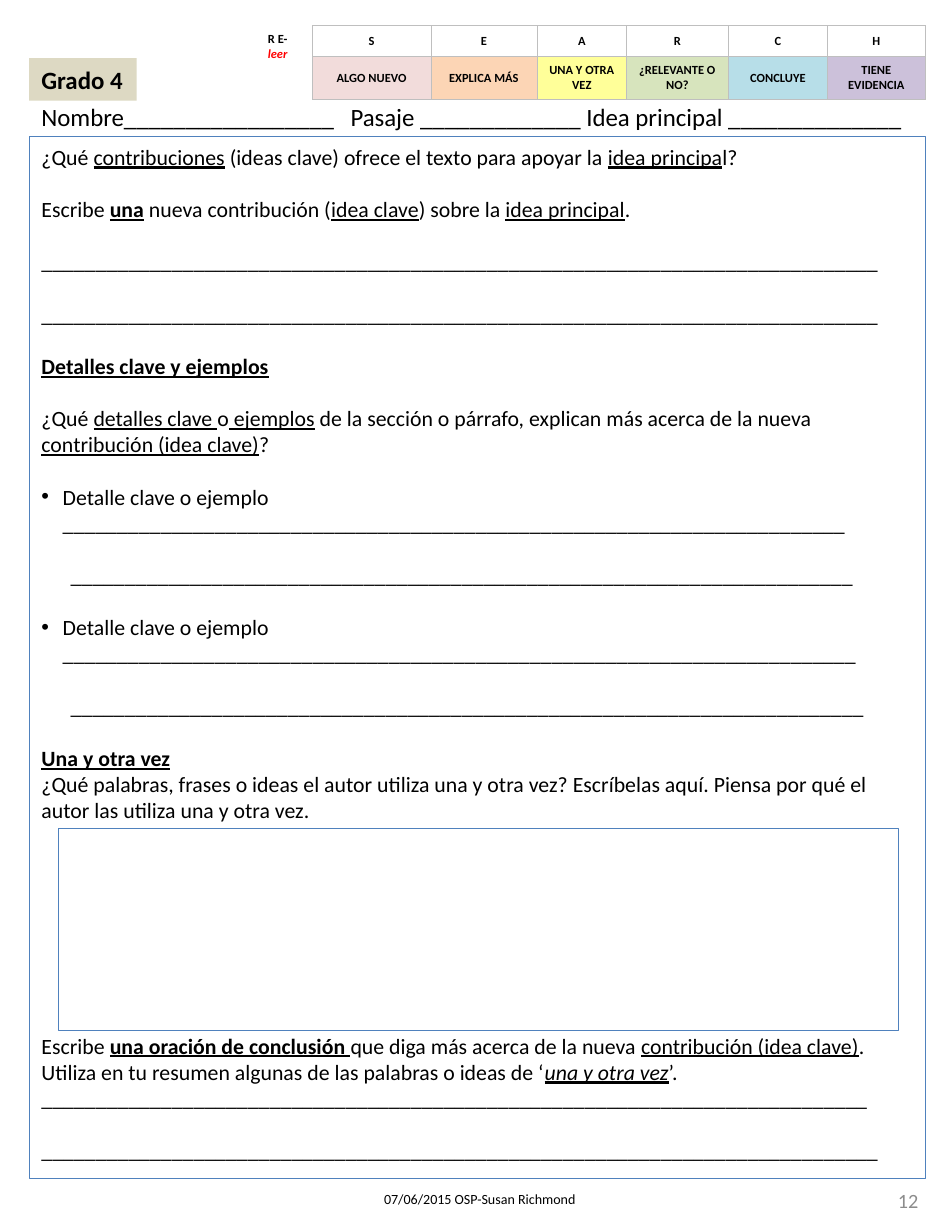
from lxml import etree
from pptx import Presentation
from pptx import util as u
from pptx.dml.color import RGBColor
from pptx.enum import shapes, text
from pptx.oxml import ns

FONT = "Calibri"
COLORS = {
    "ink": "000000", "paper": "FFFFFF", "frame": "4F81BD", "grid": "BFBFBF",
    "muted": "8C8C8C", "accent": "FF0000", "grade": "DDD9C3",
    "S": "F2DCDB", "E": "FCD5B5", "A": "FFFF99", "R": "D7E4BD", "C": "B7DEE8", "H": "CCC1DA",
}
SEARCH = [
    ("S", "ALGO NUEVO", 106), ("E", "EXPLICA MÁS", 95), ("A", "UNA Y OTRA VEZ", 80),
    ("R", "¿RELEVANTE O NO?", 91), ("C", "CONCLUYE", 89), ("H", "TIENE EVIDENCIA", 87),
]
LINE = 16.8
RULE = "_" * 77


def worksheet_lines():
    """Return (kind, blank lines before, styled runs) for each paragraph."""
    lines = [
        ("plain", 0, [("¿Qué ", ""), ("contribuciones", "u"),
                      (" (ideas clave) ofrece el texto para apoyar la ", ""),
                      ("idea principa", "u"), ("l?", "")]),
        ("plain", 1, [("Escribe ", ""), ("una", "bu"), (" nueva contribución (", ""),
                      ("idea clave", "u"), (") sobre la ", ""), ("idea principal", "u"), (".", "")]),
        ("plain", 1, [(RULE, "")]),
        ("plain", 1, [(RULE, "")]),
        ("plain", 1, [("Detalles clave y ejemplos", "bu")]),
        ("plain", 1, [("¿Qué ", ""), ("detalles clave ", "u"), ("o", ""), (" ejemplos", "u"),
                      (" de la sección o párrafo, explican más acerca de la nueva ", ""),
                      ("contribución (idea clave)", "u"), ("?", "")]),
    ]
    for length in (72, 73):
        lines += [("bullet", 1, [("Detalle clave o ejemplo " + "_" * length, "")]),
                  ("inset", 1, [("_" * length, "")])]
    return lines + [
        ("plain", 1, [("Una y otra vez", "bu")]),
        ("plain", 0, [("¿Qué palabras, frases o ideas el autor utiliza una y otra vez? "
                       "Escríbelas aquí. Piensa por qué el autor las utiliza una y otra vez.", "")]),
        ("plain", 8, [("Escribe ", ""), ("una oración de conclusión ", "bu"),
                      ("que diga más acerca de la nueva ", ""), ("contribución (idea clave)", "u"),
                      (". Utiliza en tu resumen algunas de las palabras o ideas de ‘", ""),
                      ("una y otra vez", "iu"), ("’.", "")]),
        ("plain", 0, [(RULE[:-1], "")]),
        ("plain", 1, [(RULE, "")]),
    ]


def part(box, left, top, width, height):
    """Return the part of a box given by percentages of its size."""
    x, y, w, h = box
    return (int(x + w * left / 100), int(y + h * top / 100),
            int(w * width / 100), int(h * height / 100))


def rgb(name):
    """Look up a named colour."""
    return RGBColor.from_string(COLORS[name])


def write(paragraph, runs, size, color="ink", align=text.PP_ALIGN.LEFT):
    """Write styled runs, with b, i and u for bold, italic and underline."""
    paragraph.alignment = align
    for words, style in runs:
        run = paragraph.add_run()
        run.text = words
        font = run.font
        font.name, font.size = FONT, u.Pt(size)
        font.color.rgb = rgb(color)
        font.bold, font.italic, font.underline = (mark in style for mark in "biu")


def set_insets(frame, side=0.11, end=0.06):
    """Wrap a text frame and set its insets in inches."""
    frame.word_wrap = True
    frame.margin_left = frame.margin_right = u.Inches(side)
    frame.margin_top = frame.margin_bottom = u.Inches(end)


def indent(paragraph, left, first=0, bullet=False):
    """Indent a paragraph, with a hanging bullet if asked."""
    props = paragraph._p.get_or_add_pPr()
    props.set("marL", str(u.Inches(left)))
    props.set("indent", str(u.Inches(first)))
    if bullet:
        etree.SubElement(props, ns.qn("a:buFont"), typeface="Arial")
        etree.SubElement(props, ns.qn("a:buChar"), char="•")


def add_label(slide, box, words, size, style="", color="ink", align=text.PP_ALIGN.LEFT):
    """Add a one-paragraph text box."""
    label = slide.shapes.add_textbox(*box)
    set_insets(label.text_frame)
    write(label.text_frame.paragraphs[0], [(words, style)], size, color, align)
    return label


def add_frame(slide, box):
    """Add an unfilled rectangle with a thin outline."""
    frame = slide.shapes.add_shape(shapes.MSO_SHAPE.RECTANGLE, *box)
    frame.shadow.inherit = False
    frame.fill.background()
    frame.line.color.rgb = rgb("frame")
    frame.line.width = u.Pt(0.75)
    return frame


def add_worksheet(slide, box):
    """Add the framed questions and the answer box inside them."""
    sheet = add_frame(slide, box)
    sheet.fill.solid()
    sheet.fill.fore_color.rgb = rgb("paper")
    questions = sheet.text_frame
    set_insets(questions)
    questions.vertical_anchor = text.MSO_ANCHOR.TOP
    for index, (kind, gap, runs) in enumerate(worksheet_lines()):
        question = questions.add_paragraph() if index else questions.paragraphs[0]
        question.space_before = u.Pt(gap * LINE)
        if kind == "bullet":
            indent(question, 0.19, -0.19, True)
        elif kind == "inset":
            indent(question, 0.26)
        write(question, runs, 14)
    add_frame(slide, part(box, 3.25, 66.45, 93.75, 19.35))


def add_heading(slide, box):
    """Add the line for the pupil's name and the grade tag above it."""
    name = add_label(slide, part(box, 0, 42.86, 100, 50), "Nombre" + "_" * 17 + "\tPasaje "
                     + "_" * 13 + " Idea principal " + "_" * 14, 16)
    props = name.text_frame.paragraphs[0]._p.get_or_add_pPr()
    stops = etree.SubElement(props, ns.qn("a:tabLst"))
    etree.SubElement(stops, ns.qn("a:tab"), pos=str(u.Inches(2.76)), algn="l")
    grade = add_label(slide, part(box, 0, 0, 11.96, 50), "Grado 4", 16, "b")
    grade.fill.solid()
    grade.fill.fore_color.rgb = rgb("grade")


def style_cell(cell, fill, sides):
    """Fill a cell and draw the named sides of its border."""
    cell.fill.solid()
    cell.fill.fore_color.rgb = rgb(fill)
    set_insets(cell.text_frame, 0.11, 0.05)
    props = cell._tc.get_or_add_tcPr()
    for index, side in enumerate("LRTB"):
        border = etree.Element(ns.qn("a:ln" + side), w=str(u.Pt(0.5)))
        if side in sides:
            paint = etree.SubElement(border, ns.qn("a:solidFill"))
            etree.SubElement(paint, ns.qn("a:srgbClr"), val=COLORS["grid"])
        else:
            etree.SubElement(border, ns.qn("a:noFill"))
        props.insert(index, border)


def add_search_table(slide, box):
    """Add the table that explains each letter of the reading strategy."""
    table = slide.shapes.add_table(2, len(SEARCH) + 1, *box).table
    table.first_row = table.horz_banding = False
    shares = [62] + [share for _, _, share in SEARCH]
    for column, share in zip(table.columns, shares):
        column.width = int(box[2] * share / sum(shares))
    for row, share in zip(table.rows, (27, 39)):
        row.height = int(box[3] * share / 66)
    center = text.PP_ALIGN.CENTER
    for row in range(2):
        style_cell(table.cell(row, 0), "paper", "R")
    reread = table.cell(0, 0)
    reread.merge(table.cell(1, 0))
    write(reread.text_frame.paragraphs[0], [("R E-", "b")], 8, align=center)
    write(reread.text_frame.add_paragraph(), [("leer", "bi")], 8, "accent", center)
    for column, (letter, meaning, _) in enumerate(SEARCH, 1):
        for row, (words, fill) in enumerate([(letter, "paper"), (meaning, letter)]):
            cell = table.cell(row, column)
            style_cell(cell, fill, "LRTB")
            cell.vertical_anchor = text.MSO_ANCHOR.MIDDLE
            write(cell.text_frame.paragraphs[0], [(words, "b")], 8, align=center)


def main():
    """Build the worksheet page and save it."""
    deck = Presentation()
    deck.slide_width, deck.slide_height = u.Inches(8.5), u.Inches(11)
    slide = deck.slides.add_slide(deck.slide_layouts[6])
    page = (0, 0, deck.slide_width, deck.slide_height)
    credit = add_label(slide, part(page, 39.18, 96.18, 35.76, 5.36 - 1.54),
                       "07/06/2015 OSP-Susan Richmond", 9)
    set_insets(credit.text_frame, 0.1, 0.05)
    add_worksheet(slide, part(page, 3.06, 11.09, 94.12, 84.55))
    add_heading(slide, part(page, 3.06, 4.73, 94.47, 6.9))
    number = add_label(slide, part(page, 74.47, 94.73, 23.29, 5.36), "12", 13,
                       color="muted", align=text.PP_ALIGN.RIGHT)
    number.text_frame.vertical_anchor = text.MSO_ANCHOR.MIDDLE
    add_search_table(slide, part(page, 25.53, 2.09, 71.65, 6))
    deck.save("out.pptx")


if __name__ == "__main__":
    main()
